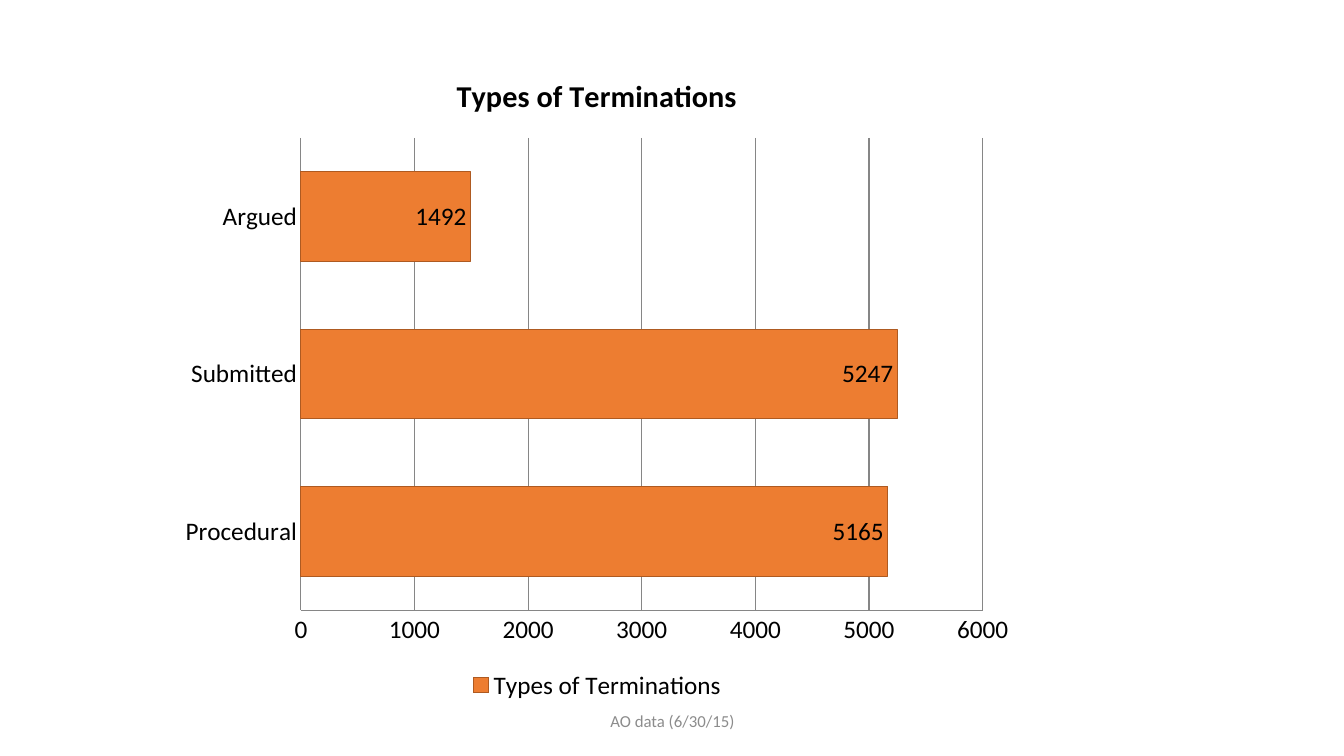
from pptx import Presentation
from pptx.chart.data import CategoryChartData
from pptx.dml.color import RGBColor
from pptx.enum import chart as charts, text
from pptx.util import Inches, Pt

ORANGE = RGBColor(0xED, 0x7D, 0x31)
DARK_ORANGE = RGBColor(0xAE, 0x5A, 0x21)
BLACK = RGBColor(0, 0, 0)
AXIS_GRAY = RGBColor(0x86, 0x86, 0x86)
FOOTER_GRAY = RGBColor(0x8C, 0x8C, 0x8C)
TITLE = "Types of Terminations"
TERMINATIONS = {"Procedural": 5165, "Submitted": 5247, "Argued": 1492}


def style_font(font, **values):
    color = values.pop("color")
    for name, value in {"name": "Calibri", **values}.items():
        setattr(font, name, value)
    font.color.rgb = color


presentation = Presentation()
presentation.slide_width = Inches(13.33)
presentation.slide_height = Inches(7.5)
slide = presentation.slides.add_slide(presentation.slide_layouts[6])

# Bar chart
data = CategoryChartData()
data.categories = list(TERMINATIONS)
data.add_series(TITLE, list(TERMINATIONS.values()))
chart = slide.shapes.add_chart(
    charts.XL_CHART_TYPE.BAR_CLUSTERED,
    Inches(1.67), Inches(0.5), Inches(8.5), Inches(6.5), data).chart
style_font(chart.font, size=Pt(18), color=BLACK)

# Chart title and legend
title_frame = chart.chart_title.text_frame
title_frame.text = TITLE
style_font(title_frame.paragraphs[0].runs[0].font,
           size=Pt(21.6), bold=True, color=BLACK)
chart.has_legend = True
chart.legend.position = charts.XL_LEGEND_POSITION.BOTTOM
chart.legend.include_in_layout = False

# Bars and value labels
plot = chart.plots[0]
plot.gap_width = 75
plot.vary_by_categories = False
bars = plot.series[0].format
bars.fill.solid()
bars.fill.fore_color.rgb = ORANGE
bars.line.color.rgb = DARK_ORANGE
bars.line.width = Pt(0.75)
plot.has_data_labels = True
plot.data_labels.show_value = True
plot.data_labels.position = charts.XL_LABEL_POSITION.INSIDE_END

# Axes and gridlines
category_axis, value_axis = chart.category_axis, chart.value_axis
value_axis.minimum_scale = 0
value_axis.maximum_scale = 6000
value_axis.major_unit = 1000
value_axis.has_major_gridlines = True
for axis in (category_axis, value_axis):
    axis.major_tick_mark = charts.XL_TICK_MARK.NONE
    axis.minor_tick_mark = charts.XL_TICK_MARK.NONE
for part in (category_axis, value_axis, value_axis.major_gridlines):
    part.format.line.color.rgb = AXIS_GRAY
    part.format.line.width = Pt(0.75)

# Footer
footer = slide.shapes.add_textbox(
    Inches(4.42), Inches(6.95), Inches(4.5), Inches(0.4))
frame = footer.text_frame
frame.word_wrap = True
frame.vertical_anchor = text.MSO_ANCHOR.MIDDLE
paragraph = frame.paragraphs[0]
paragraph.alignment = text.PP_ALIGN.CENTER
run = paragraph.add_run()
run.text = "AO data (6/30/15)"
style_font(run.font, size=Pt(12), color=FOOTER_GRAY)

presentation.save("out.pptx")
